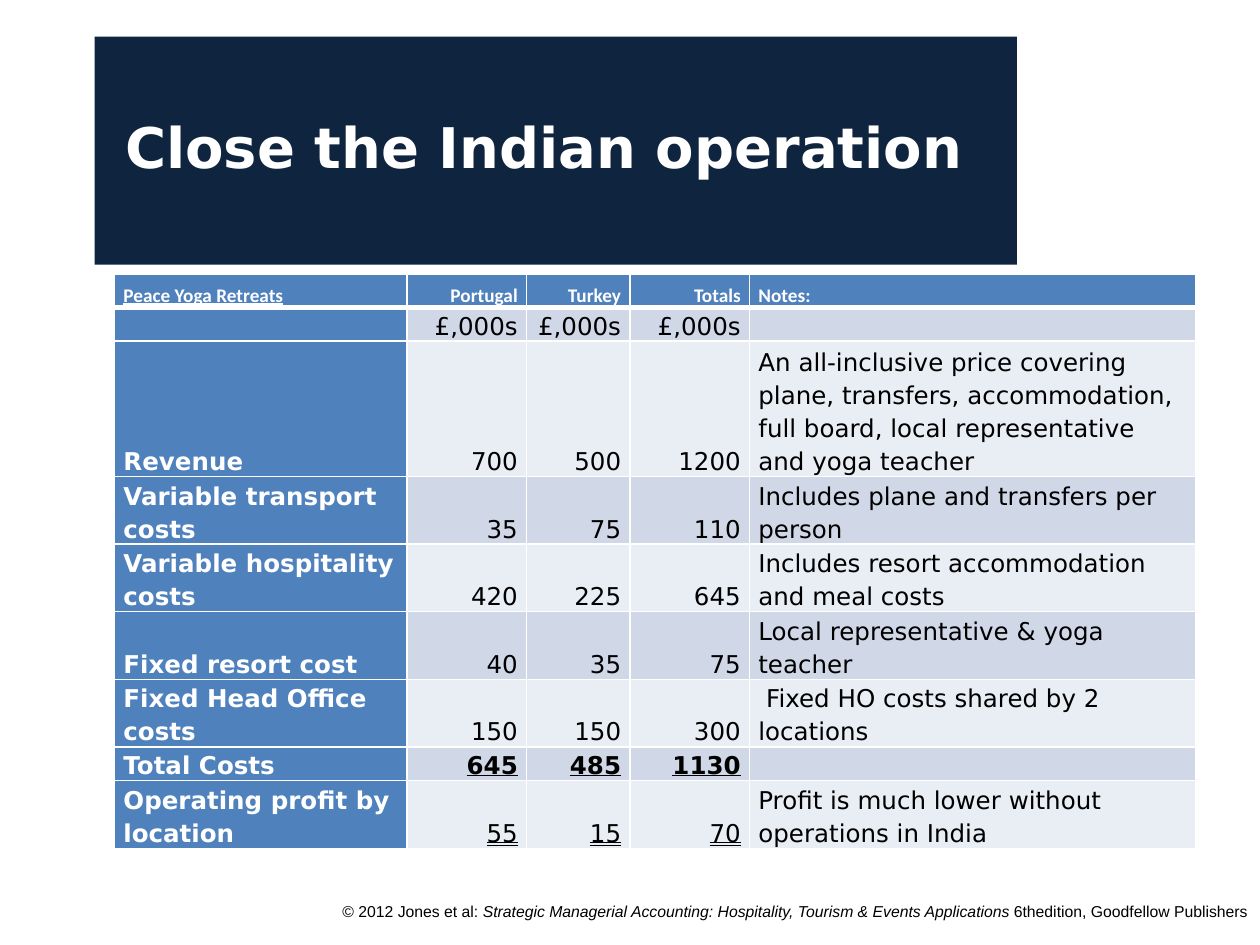
from dataclasses import dataclass

from lxml import etree
from pptx import Presentation
from pptx.dml.color import RGBColor
from pptx.enum.shapes import MSO_SHAPE
from pptx.enum.text import MSO_ANCHOR, MSO_UNDERLINE, PP_ALIGN
from pptx.oxml.ns import qn
from pptx.util import Inches, Pt

RECTANGLE = MSO_SHAPE.RECTANGLE
MIDDLE, BOTTOM = MSO_ANCHOR.MIDDLE, MSO_ANCHOR.BOTTOM
LEFT, CENTER, RIGHT = PP_ALIGN.LEFT, PP_ALIGN.CENTER, PP_ALIGN.RIGHT
DOUBLE = MSO_UNDERLINE.DOUBLE_LINE


@dataclass(frozen=True)
class Theme:
    """Colours, fonts and type sizes of the slide."""
    navy: str = "0F243E"
    blue: str = "4F81BD"
    bands: tuple = ("E9EDF4", "D0D8E8")
    white: str = "FFFFFF"
    black: str = "000000"
    main_font: str = "DejaVu Sans"
    header_font: str = "Calibri"
    footer_font: str = "Arial"
    title_size: int = 32
    body_size: int = 14
    header_size: int = 11
    footer_size: int = 9


THEME = Theme()
COLUMN_WIDTHS = (2.32, 0.95, 0.82, 0.95, 3.54)
ROW_HEIGHTS = (0.26, 0.26, 1.05, 0.53, 0.53, 0.53, 0.53, 0.26, 0.53)
ROWS = (
    ("Peace Yoga Retreats", "Portugal", "Turkey", "Totals", "Notes:"),
    ("", "£,000s", "£,000s", "£,000s", ""),
    ("Revenue", "700", "500", "1200",
     "An all-inclusive price covering plane, transfers, accommodation, "
     "full board, local representative and yoga teacher"),
    ("Variable transport costs", "35", "75", "110",
     "Includes plane and transfers per person"),
    ("Variable hospitality costs", "420", "225", "645",
     "Includes resort accommodation and meal costs"),
    ("Fixed resort cost", "40", "35", "75", "Local representative & yoga teacher"),
    ("Fixed Head Office costs", "150", "150", "300",
     " Fixed HO costs shared by 2 locations"),
    ("Total Costs", "645", "485", "1130", ""),
    ("Operating profit by location", "55", "15", "70",
     "Profit is much lower without operations in India"),
)
NUMBER_COLUMNS = (1, 2, 3)
TOTAL_ROW, PROFIT_ROW = 7, 8
FOOTER_PARTS = (
    ("© 2012 Jones et al: ", False),
    ("Strategic Managerial Accounting: Hospitality, Tourism & Events Applications ", True),
    ("6thedition, Goodfellow Publishers", False),
)


def format_font(font, name, size, color, bold=False):
    """Set the face, size, colour and weight of a font."""
    font.name = name
    font.size = Pt(size)
    font.color.rgb = RGBColor.from_string(color)
    font.bold = bold


def add_title(slide):
    """Add the dark title block."""
    shape = slide.shapes.add_shape(
        RECTANGLE, Inches(0.75), Inches(0.29), Inches(7.32), Inches(1.81))
    shape.shadow.inherit = False
    shape.fill.solid()
    shape.fill.fore_color.rgb = RGBColor.from_string(THEME.navy)
    shape.line.fill.background()
    text_frame = shape.text_frame
    text_frame.word_wrap = True
    text_frame.vertical_anchor = MIDDLE
    text_frame.margin_right = Inches(0.28)
    text_frame.margin_bottom = Inches(0.12)
    text_frame.text = "Close the Indian operation"
    paragraph = text_frame.paragraphs[0]
    paragraph.alignment = CENTER
    format_font(paragraph.runs[0].font, THEME.main_font, THEME.title_size,
                THEME.white, bold=True)


def add_borders(cell, top, bottom):
    """Draw white borders with the given top and bottom widths in points."""
    properties = cell._tc.get_or_add_tcPr()
    for tag, width in (("a:lnL", 1), ("a:lnR", 1), ("a:lnT", top), ("a:lnB", bottom)):
        line = etree.SubElement(properties, qn(tag), w=str(Pt(width)))
        fill = etree.SubElement(line, qn("a:solidFill"))
        etree.SubElement(fill, qn("a:srgbClr"), val=THEME.white)


def underline_for(row, column):
    """Return the underline style of a cell."""
    if (row, column) == (0, 0):
        return True
    if column in NUMBER_COLUMNS:
        return {TOTAL_ROW: True, PROFIT_ROW: DOUBLE}.get(row, False)
    return False


def fill_cell(cell, row, column, text):
    """Style one table cell by its place and write its text."""
    is_header = row == 0
    is_label = is_header or column == 0
    is_number = column in NUMBER_COLUMNS
    add_borders(cell, top=3 if row == 1 else 1, bottom=3 if is_header else 1)
    cell.fill.solid()
    cell.fill.fore_color.rgb = RGBColor.from_string(
        THEME.blue if is_label else THEME.bands[row % 2])
    cell.margin_left = cell.margin_right = Inches(0.07)
    cell.margin_top = cell.margin_bottom = 0
    cell.vertical_anchor = BOTTOM
    cell.text_frame.text = text
    paragraph = cell.text_frame.paragraphs[0]
    paragraph.alignment = RIGHT if is_number else LEFT
    paragraph.line_spacing = 1.15
    size = THEME.header_size if is_header else THEME.body_size
    if not text:
        etree.SubElement(paragraph._p, qn("a:endParaRPr"), sz=str(size * 100))
    for run in paragraph.runs:
        format_font(run.font, THEME.header_font if is_header else THEME.main_font, size,
                    THEME.white if is_label else THEME.black,
                    bold=is_label or (row == TOTAL_ROW and is_number))
        run.font.underline = underline_for(row, column)


def add_cost_table(slide):
    """Add the table of revenue, costs and profit."""
    table = slide.shapes.add_table(
        len(ROWS), len(COLUMN_WIDTHS), Inches(0.91), Inches(2.18),
        Inches(sum(COLUMN_WIDTHS)), Inches(sum(ROW_HEIGHTS))).table
    for column, width in zip(table.columns, COLUMN_WIDTHS):
        column.width = Inches(width)
    for row, height in zip(table.rows, ROW_HEIGHTS):
        row.height = Inches(height)
    for row, texts in enumerate(ROWS):
        for column, text in enumerate(texts):
            fill_cell(table.cell(row, column), row, column, text)


def add_footer(slide):
    """Add the copyright line."""
    text_frame = slide.shapes.add_textbox(
        Inches(2.23), Inches(7.11), Inches(7.77), Inches(0.39)).text_frame
    text_frame.word_wrap = True
    paragraph = text_frame.paragraphs[0]
    paragraph.alignment = RIGHT
    for text, italic in FOOTER_PARTS:
        run = paragraph.add_run()
        run.text = text
        format_font(run.font, THEME.footer_font, THEME.footer_size, THEME.black)
        run.font.italic = italic


def main():
    """Build and save the presentation."""
    presentation = Presentation()
    presentation.slide_width = Inches(10)
    presentation.slide_height = Inches(7.5)
    slide = presentation.slides.add_slide(presentation.slide_layouts[6])
    add_footer(slide)
    add_title(slide)
    add_cost_table(slide)
    presentation.save("out.pptx")


if __name__ == "__main__":
    main()
